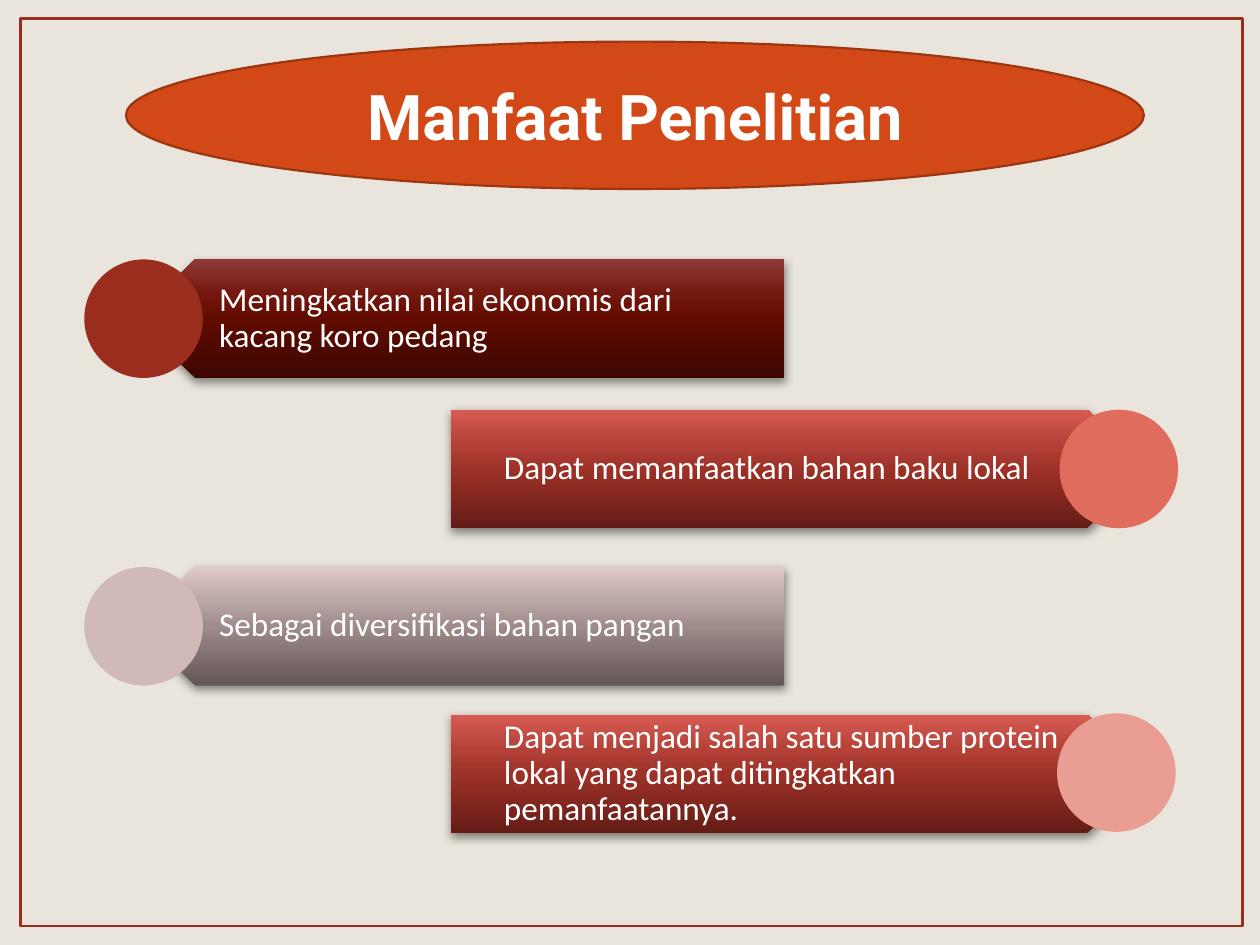
"""Build the "Manfaat Penelitian" slide with four alternating benefit banners."""
from dataclasses import dataclass

from pptx import Presentation
from pptx.dml.color import RGBColor
from pptx.enum.shapes import MSO_SHAPE
from pptx.enum.text import MSO_ANCHOR, MSO_AUTO_SIZE, PP_ALIGN
from pptx.oxml import parse_xml
from pptx.oxml.ns import nsdecls, qn
from pptx.shapes.autoshape import Shape
from pptx.slide import Slide
from pptx.util import Cm, Pt

RECTANGLE, ELLIPSE, PLATE = MSO_SHAPE.RECTANGLE, MSO_SHAPE.OVAL, MSO_SHAPE.PENTAGON
MIDDLE, CENTER, LEFT = MSO_ANCHOR.MIDDLE, PP_ALIGN.CENTER, PP_ALIGN.LEFT
NO_AUTOFIT = MSO_AUTO_SIZE.NONE

CREAM = RGBColor(0xE9, 0xE5, 0xDC)
WHITE = RGBColor(0xFF, 0xFF, 0xFF)
BRICK = RGBColor(0x9B, 0x2D, 0x1F)
ORANGE = RGBColor(0xD3, 0x48, 0x17)
RUST = RGBColor(0x9C, 0x35, 0x11)
CORAL = RGBColor(0xDF, 0x6C, 0x5D)
MAUVE = RGBColor(0xD1, 0xB9, 0xB8)
SALMON = RGBColor(0xE9, 0x9D, 0x93)


def shades(*codes: str) -> tuple[RGBColor, ...]:
    return tuple(RGBColor.from_string(code) for code in codes)


MAROON_SHADES = shades("3C0700", "610B00", "73170F", "8E3A35")
RED_SHADES = shades("641C16", "9D3127", "B34138", "D85B52")
GREY_SHADES = shades("625655", "9E8B8A", "B9A5A4", "E0C9C8")
STOPS = (0, 50, 70, 100)

BANNER_HEIGHT = 2.39
TITLE_AREA = (2.54, 0.84, 20.52, 2.97)
CAPTION_FRAME = {
    "word_wrap": True, "auto_size": NO_AUTOFIT, "vertical_anchor": MIDDLE,
    "margin_left": Cm(1.07), "margin_right": Cm(0.38),
    "margin_top": Cm(0.2), "margin_bottom": Cm(0.2),
}
TITLE_FRAME = {"word_wrap": True, "auto_size": NO_AUTOFIT, "vertical_anchor": MIDDLE}
CAPTION_FONT = {"name": "Calibri", "size": Pt(19)}
TITLE_FONT = {"name": "Roboto", "size": Pt(36), "bold": True}


@dataclass(frozen=True)
class Side:
    plate_left: float
    plate_width: float
    text_left: float
    text_width: float
    points_left: bool


@dataclass(frozen=True)
class Banner:
    text: str
    side: Side
    top: float
    disc_left: float
    disc_top: float
    gradient: tuple[RGBColor, ...]
    disc_color: RGBColor


LEFT_SIDE = Side(2.74, 13.08, 3.35, 12.46, True)
RIGHT_SIDE = Side(9.09, 14.02, 9.09, 13.41, False)
BANNERS = (
    Banner("Meningkatkan nilai ekonomis dari kacang koro pedang",
           LEFT_SIDE, 5.23, 1.7, 5.23, MAROON_SHADES, BRICK),
    Banner("Dapat memanfaatkan bahan baku lokal",
           RIGHT_SIDE, 8.26, 21.36, 8.26, RED_SHADES, CORAL),
    Banner("Sebagai diversifikasi bahan pangan",
           LEFT_SIDE, 11.43, 1.7, 11.43, GREY_SHADES, MAUVE),
    Banner("Dapat menjadi salah satu sumber protein lokal yang dapat "
           "ditingkatkan pemanfaatannya.",
           RIGHT_SIDE, 14.41, 21.31, 14.38, RED_SHADES, SALMON),
)


def apply(target: object, values: dict) -> None:
    for name, value in values.items():
        setattr(target, name, value)


def write(box: Shape, text: str, frame: dict, font: dict, align: PP_ALIGN,
          spacing: float) -> None:
    apply(box.text_frame, frame)
    para = box.text_frame.paragraphs[0]
    apply(para, {"alignment": align, "line_spacing": spacing})
    span = para.add_run()
    span.text = text
    apply(span.font, font)
    span.font.color.rgb = WHITE


def add_figure(page: Slide, kind: MSO_SHAPE, area: tuple[float, ...],
               fill: RGBColor | None = None, line: RGBColor | None = None,
               weight: float = 1) -> Shape:
    figure = page.shapes.add_shape(kind, *map(Cm, area))
    figure.shadow.inherit = False
    if fill is None:
        figure.fill.background()
    else:
        figure.fill.solid()
        figure.fill.fore_color.rgb = fill
    if line is None:
        figure.line.fill.background()
    else:
        figure.line.color.rgb = line
        figure.line.width = Pt(weight)
    return figure


def add_plate(page: Slide, banner: Banner) -> None:
    side = banner.side
    area = (side.plate_left, banner.top, side.plate_width, BANNER_HEIGHT)
    plate = add_figure(page, PLATE, area)
    properties = plate.element.spPr
    if side.points_left:
        properties.find(qn("a:xfrm")).set("flipH", "1")
    stops = "".join(
        f'<a:gs pos="{stop * 1000}"><a:srgbClr val="{color}"/></a:gs>'
        for stop, color in zip(STOPS, banner.gradient))
    gradient = parse_xml(
        f'<a:gradFill {nsdecls("a")} rotWithShape="1"><a:gsLst>{stops}</a:gsLst>'
        '<a:lin ang="16200000" scaled="0"/></a:gradFill>')
    properties.replace(properties.find(qn("a:noFill")), gradient)
    properties.find(qn("a:effectLst")).append(parse_xml(
        f'<a:outerShdw {nsdecls("a")} blurRad="{Pt(5)}" dist="{Pt(2)}" dir="5400000" '
        'algn="ctr" rotWithShape="0"><a:srgbClr val="000000">'
        '<a:alpha val="43000"/></a:srgbClr></a:outerShdw>'))


def add_banner(page: Slide, banner: Banner) -> None:
    side = banner.side
    add_plate(page, banner)
    area = (side.text_left, banner.top, side.text_width, BANNER_HEIGHT)
    box = page.shapes.add_textbox(*map(Cm, area))
    write(box, banner.text, CAPTION_FRAME, CAPTION_FONT, LEFT, 0.9)
    add_figure(page, ELLIPSE, (banner.disc_left, banner.disc_top,
                               BANNER_HEIGHT, BANNER_HEIGHT), banner.disc_color)


def add_title(page: Slide) -> None:
    oval = add_figure(page, ELLIPSE, TITLE_AREA, ORANGE, RUST, 1.25)
    title = page.shapes.title
    apply(title, dict(zip(("left", "top", "width", "height"), map(Cm, TITLE_AREA))))
    write(title, "Manfaat Penelitian", TITLE_FRAME, TITLE_FONT, CENTER, 1.0)
    oval.element.addnext(title.element)


def main() -> None:
    deck = Presentation()
    apply(deck, {"slide_width": Cm(25.4), "slide_height": Cm(19.05)})
    page = deck.slides.add_slide(deck.slide_layouts[5])
    page.background.fill.solid()
    page.background.fill.fore_color.rgb = CREAM
    add_figure(page, RECTANGLE, (0.41, 0.38, 24.64, 18.29), line=BRICK, weight=1.5)
    for banner in BANNERS:
        add_banner(page, banner)
    add_title(page)
    deck.save("out.pptx")


if __name__ == "__main__":
    main()
